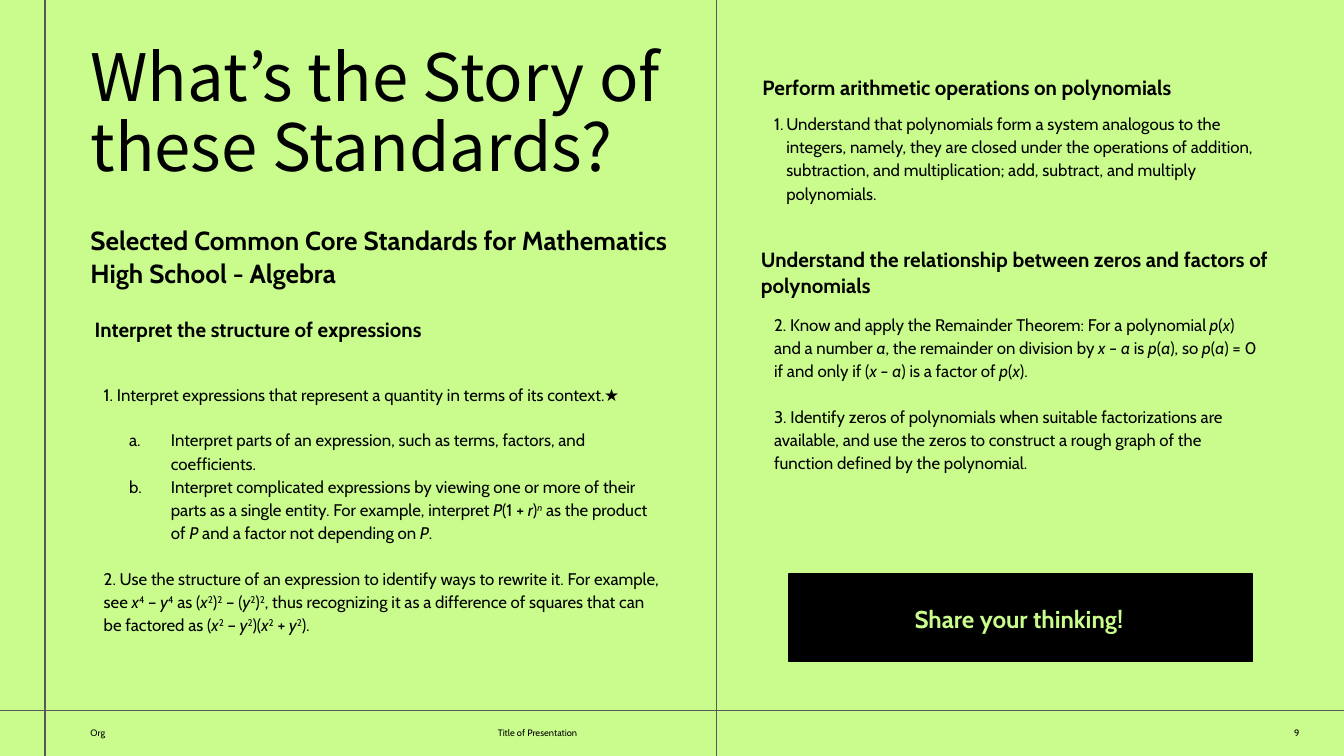
from dataclasses import dataclass

from lxml import etree
from pptx import Presentation
from pptx.dml.color import RGBColor
from pptx.enum.shapes import MSO_CONNECTOR, MSO_SHAPE
from pptx.enum.text import MSO_ANCHOR, MSO_AUTO_SIZE, PP_ALIGN
from pptx.oxml.ns import qn
from pptx.util import Cm, Pt

LIME = RGBColor(0xC9, 0xFC, 0x8D)
BLACK = RGBColor(0, 0, 0)
GRAY = RGBColor(0x59, 0x59, 0x59)
LEFT, MID, RIGHT = PP_ALIGN.LEFT, PP_ALIGN.CENTER, PP_ALIGN.RIGHT
TOP, CENTER = MSO_ANCHOR.TOP, MSO_ANCHOR.MIDDLE
STRAIGHT, RECT = MSO_CONNECTOR.STRAIGHT, MSO_SHAPE.RECTANGLE
NO_FIT = MSO_AUTO_SIZE.NONE

WIDTH, HEIGHT = 25.4, 14.29
EDGE, FOLD = 1.71, 13.54
COL = 14.38
BASE, FOOT = 13.43, 0.86


@dataclass
class Para:
    text: str  # *...* is italic, ^...^ is superscript
    before: float = 0
    after: float = 0
    left: float = 0
    first: float = 0
    num: str = ""


@dataclass
class Block:
    box: tuple[float, float, float, float]
    paras: list[Para]
    size: float
    bold: bool = False
    lead: float = 1.0
    inset: tuple[float, float] = (0, 0)  # sides, top and bottom
    align: PP_ALIGN = LEFT
    anchor: MSO_ANCHOR = TOP
    color: RGBColor = BLACK
    font: str = "Cabin"
    slot: int | None = None  # placeholder index


def head(x: float, y: float, high: float, text: str, slot: int | None = None,
         left: float = 0) -> Block:
    return Block((x, y, 9.75, high), [Para(text, left=left)], 11, True, 1.05, slot=slot)


def items(x: float, y: float, wide: float, high: float, paras: list[Para],
          slot: int | None = None) -> Block:
    return Block((x, y, wide, high), paras, 9, lead=1.15, inset=(0.25, 0), slot=slot)


def foot(x: float, text: str, align: PP_ALIGN = LEFT) -> Block:
    return Block((x, BASE, 7.44, FOOT), [Para(text)], 5, align=align, anchor=CENTER)


BLOCKS = [
    # Footer
    foot(EDGE, "Org"),
    foot(9.41, "Title of Presentation"),
    foot(17.12, "9", RIGHT),
    # Left column
    Block((EDGE, 0.85, 11.2, 2.69), [Para("What’s the Story of these Standards?")],
          35, lead=0.9, font="Noto Sans CJK KR", slot=0),
    Block((EDGE, 4.22, 11.2, 1.22),
          [Para("Selected Common Core Standards for Mathematics High School - Algebra")],
          14, True, 1.05),
    head(EDGE, 5.97, 0.48, "Interpret the structure of expressions", 1, 0.08),
    items(EDGE, 7.21, 10.85, 5.23, [
        Para("1. Interpret expressions that represent a quantity in terms of its context.★", 12),
        Para("Interpret parts of an expression, such as terms, factors, and coefficients.",
             12, 0, 1.27, -0.79, "alphaLcPeriod"),
        Para("Interpret complicated expressions by viewing one or more of their parts as a "
             "single entity. For example, interpret *P*(1 + *r*)^*n*^ as the product of *P* "
             "and a factor not depending on *P*.", 0, 0, 1.27, -0.79, "alphaLcPeriod"),
        Para("2. Use the structure of an expression to identify ways to rewrite it. For "
             "example, see *x*^4^ – *y*^4^ as (*x*^2^)^2^ – (*y*^2^)^2^, thus recognizing it "
             "as a difference of squares that can be factored as "
             "(*x*^2^ – *y*^2^)(*x*^2^ + *y*^2^).", 12, 10),
    ], 2),
    # Right column
    head(14.41, 1.4, 0.48, "Perform arithmetic operations on polynomials", 3),
    items(COL, 2.09, 9.45, 1.7, [
        Para("Understand that polynomials form a system analogous to the integers, namely, "
             "they are closed under the operations of addition, subtraction, and "
             "multiplication; add, subtract, and multiply polynomials.",
             12, 10, 0.23, -0.38, "arabicPeriod"),
    ], 4),
    head(COL, 4.65, 0.97,
         "Understand the relationship between zeros and factors of polynomials"),
    items(COL, 5.89, 9.45, 3.02, [
        Para("2. Know and apply the Remainder Theorem: For a polynomial *p*(*x*) and a number "
             "*a*, the remainder on division by *x – a *is *p*(*a*), so *p*(*a*) = 0 if and "
             "only if (*x – a*) is a factor of *p*(*x*).", 12),
        Para("3. Identify zeros of polynomials when suitable factorizations are available, and "
             "use the zeros to construct a rough graph of the function defined by the "
             "polynomial.", 12, 10),
    ]),
    Block((15.47, 11.18, 7.57, 1.07), [Para("Share your thinking!")], 13, True,
          inset=(0.25, 0.25), align=MID, color=LIME),
]


def add_runs(par, text: str, block: Block) -> None:
    for i, part in enumerate(text.split("^")):
        for j, piece in enumerate(part.split("*")):
            if not piece:
                continue
            run = par.add_run()
            run.text = piece
            font = run.font
            font.name, font.size, font.bold = block.font, Pt(block.size), block.bold
            font.italic = j % 2 == 1
            font.color.rgb = block.color
            if i % 2:
                run._r.get_or_add_rPr().set("baseline", "30000")


def set_list(par, item: Para) -> None:
    props = par._p.get_or_add_pPr()
    props.set("marL", str(Cm(item.left)))
    props.set("indent", str(Cm(item.first)))
    if item.num:
        etree.SubElement(props, qn("a:buAutoNum")).set("type", item.num)
    else:
        etree.SubElement(props, qn("a:buNone"))


def draw_text(slide, block: Block) -> None:
    x, y, wide, high = map(Cm, block.box)
    if block.slot is None:
        shape = slide.shapes.add_textbox(x, y, wide, high)
    else:
        shape = slide.placeholders[block.slot]
        shape.left, shape.top, shape.width, shape.height = x, y, wide, high
    frame = shape.text_frame
    frame.word_wrap = True
    frame.auto_size = NO_FIT
    frame.vertical_anchor = block.anchor
    side, edge = map(Cm, block.inset)
    frame.margin_left = side
    frame.margin_right = side if edge else 0
    frame.margin_top = frame.margin_bottom = edge
    for i, item in enumerate(block.paras):
        par = frame.add_paragraph() if i else frame.paragraphs[0]
        par.alignment = block.align
        par.line_spacing = block.lead
        par.space_before, par.space_after = Pt(item.before), Pt(item.after)
        set_list(par, item)
        add_runs(par, item.text, block)


def draw_line(slide, x1: float, y1: float, x2: float, y2: float) -> None:
    line = slide.shapes.add_connector(STRAIGHT, Cm(x1), Cm(y1), Cm(x2), Cm(y2))
    line.line.color.rgb = GRAY
    line.line.width = Pt(0.75)
    etree.SubElement(line._element.spPr, qn("a:effectLst"))


def main() -> None:
    deck = Presentation()
    deck.slide_width, deck.slide_height = Cm(WIDTH), Cm(HEIGHT)
    slide = deck.slides.add_slide(deck.slide_layouts.get_by_name("Comparison"))
    slide.background.fill.solid()
    slide.background.fill.fore_color.rgb = LIME

    # Page rules
    draw_line(slide, 0, BASE, WIDTH, BASE)
    for x in (0.85, FOLD):
        draw_line(slide, x, 0, x, HEIGHT)

    # Call to action panel
    panel = slide.shapes.add_shape(RECT, Cm(14.91), Cm(10.85), Cm(8.76), Cm(1.66))
    panel.shadow.inherit = False
    panel.fill.solid()
    panel.fill.fore_color.rgb = BLACK
    panel.line.color.rgb = BLACK
    panel.line.width = Pt(0.75)

    for block in BLOCKS:
        draw_text(slide, block)
    deck.save("out.pptx")


if __name__ == "__main__":
    main()
